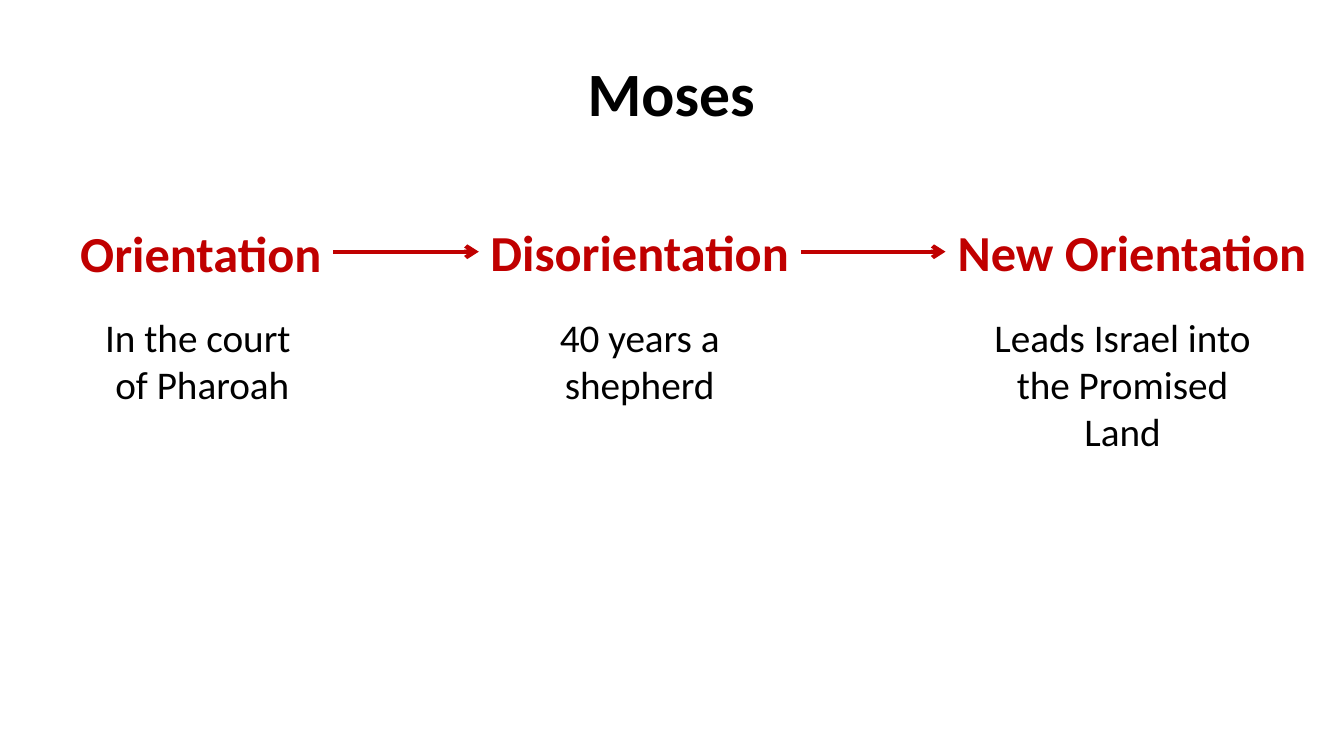
from lxml import etree
from pptx import Presentation
from pptx.dml.color import RGBColor
from pptx.enum.shapes import MSO_CONNECTOR
from pptx.enum.text import MSO_ANCHOR, MSO_AUTO_SIZE, PP_ALIGN
from pptx.oxml.ns import qn
from pptx.util import Pt

STRAIGHT = MSO_CONNECTOR.STRAIGHT
TOP = MSO_ANCHOR.TOP
NO_FIT = MSO_AUTO_SIZE.NONE
LEFT, CENTER = PP_ALIGN.LEFT, PP_ALIGN.CENTER
FONT = "Calibri"
COLORS = {"stage": "C00000", "text": "000000"}


def place(shape, left, top, width, height):
    shape.left, shape.top = Pt(left), Pt(top)
    shape.width, shape.height = Pt(width), Pt(height)


def write(box, lines, size, color, bold=False, align=CENTER, wrap=False):
    frame = box.text_frame
    frame.word_wrap = wrap
    frame.auto_size = NO_FIT
    frame.vertical_anchor = TOP
    para = frame.paragraphs[0]
    para.alignment = align
    for number, line in enumerate(lines):
        if number:
            para.add_line_break()
        span = para.add_run()
        span.text = line
        span.font.name = FONT
        span.font.size = Pt(size)
        span.font.bold = bold
        span.font.color.rgb = RGBColor.from_string(COLORS[color])


deck = Presentation()
deck.slide_width, deck.slide_height = Pt(960), Pt(540)
page = deck.slides.add_slide(deck.slide_layouts[5])

# Title
title = page.shapes.title
place(title, 412.5, 35.3, 134.6, 60.5)
write(title, ["Moses"], 44, "text", bold=True, align=LEFT)

# Stages: heading, its left, top and width; story lines, their left, width and wrap
stages = [
    ("Orientation", 49, 155, 189, ["In the court ", "of Pharoah"], 67, 155, False),
    ("Disorientation", 342, 154.5, 230, ["40 years a shepherd"], 356.4, 201, True),
    ("New Orientation", 675.4, 154.5, 266.4,
     ["Leads Israel into the Promised Land"], 692, 219.6, True),
]
for heading, left, top, width, story, story_left, story_width, wrap in stages:
    heading_box = page.shapes.add_textbox(Pt(left), Pt(top), Pt(width), Pt(51))
    write(heading_box, [heading], 36, "stage", bold=True)
    story_box = page.shapes.add_textbox(Pt(story_left), Pt(220.3), Pt(story_width), Pt(75))
    write(story_box, story, 28, "text", wrap=wrap)

# Arrows from each stage to the next
for stage, following in zip(stages, stages[1:]):
    start, end = stage[1] + stage[3], following[1]
    arrow = page.shapes.add_connector(STRAIGHT, Pt(start), Pt(179.8), Pt(end), Pt(179.8))
    arrow.line.color.rgb = RGBColor.from_string(COLORS["stage"])
    arrow.line.width = Pt(3)
    properties = arrow.element.spPr
    etree.SubElement(properties.find(qn("a:ln")), qn("a:tailEnd"), type="arrow")
    etree.SubElement(properties, qn("a:effectLst"))

deck.save("out.pptx")
